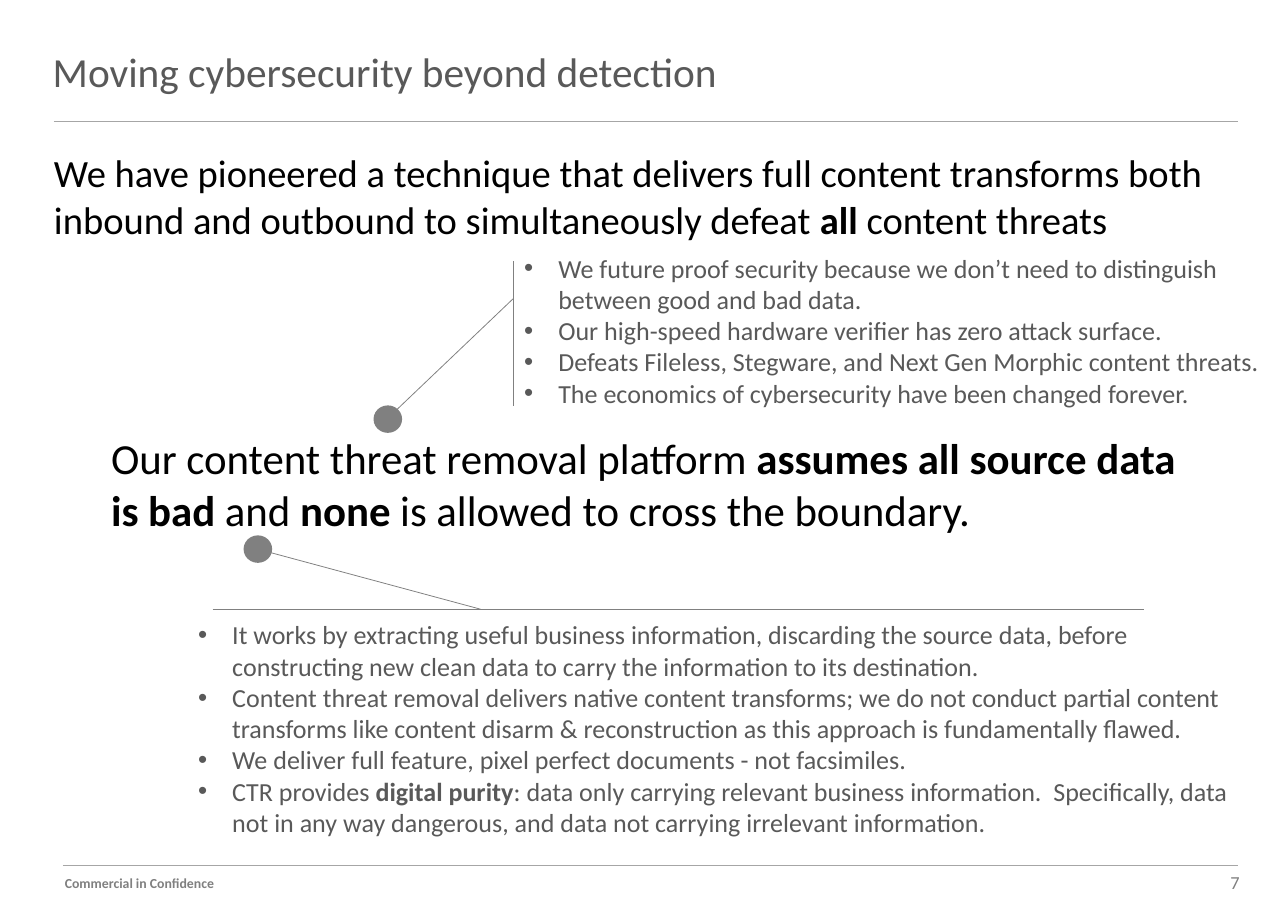
from lxml.etree import SubElement
from pptx import Presentation
from pptx.dml.color import RGBColor
from pptx.enum.shapes import MSO_CONNECTOR, MSO_SHAPE
from pptx.enum.text import MSO_ANCHOR, MSO_AUTO_SIZE, PP_ALIGN
from pptx.oxml.ns import qn
from pptx.util import Inches, Pt

BLACK = RGBColor(0x00, 0x00, 0x00)
DARK_GRAY = RGBColor(0x59, 0x59, 0x59)
MID_GRAY = RGBColor(0x80, 0x80, 0x80)
RULE_GRAY = RGBColor(0xA6, 0xA6, 0xA6)
FONT = "Calibri"
BULLET_INDENT = Inches(0.31)

STATEMENT = [[
    ("We have pioneered a technique that delivers full content transforms both "
     "inbound and outbound to simultaneously defeat ", False),
    ("all", True),
    (" content threats", False),
]]
PLATFORM = [[
    ("Our content threat removal platform ", False),
    ("assumes all source data is bad", True),
    (" and ", False),
    ("none ", True),
    ("is allowed to cross the boundary.", False),
]]
BENEFITS = [
    [("We future proof security because we don’t need to distinguish "
      "between good and bad data.", False)],
    [("Our high-speed hardware verifier has zero attack surface.", False)],
    [("Defeats Fileless, Stegware, and Next Gen Morphic content threats.", False)],
    [("The economics of cybersecurity have been changed forever.", False)],
]
METHOD = [
    [("It works by extracting useful business information, discarding the source data, "
      "before constructing new clean data to carry the information to its destination.", False)],
    [("Content threat removal delivers native content transforms; we do not conduct partial "
      "content transforms like content disarm & reconstruction as this approach is "
      "fundamentally flawed.", False)],
    [("We deliver full feature, pixel perfect documents - not facsimiles.", False)],
    [("CTR provides ", False),
     ("digital purity", True),
     (": data only carrying relevant business information.  Specifically, data not in any "
      "way dangerous, and data not carrying irrelevant information.", False)],
]
HEADING = [[("Moving cybersecurity beyond detection", False)]]
CONFIDENTIAL = [[("Commercial in Confidence", True)]]
PAGE_NUMBER = [[("7", False)]]

# Percent of slide width and height: left, top, width, height
STATEMENT_AREA = (3.25, 15.6, 97.6, 11.73)
TEXT_BOXES = [
    (PAGE_NUMBER, (83.66, 95.04, 13.43, 3.63), 12, MID_GRAY, False, PP_ALIGN.RIGHT),
    (CONFIDENTIAL, (4.19, 95.4, 29, 3.02), 9, MID_GRAY, False, PP_ALIGN.LEFT),
    (PLATFORM, (7.78, 46.8, 86.31, 12.58), 28, BLACK, False, PP_ALIGN.LEFT),
    (BENEFITS, (39.86, 27.09, 59.2, 18.5), 17, DARK_GRAY, True, PP_ALIGN.LEFT),
    (METHOD, (14.54, 67.35, 83.66, 26.24), 17, DARK_GRAY, True, PP_ALIGN.LEFT),
    (HEADING, (3.25, 4.47, 78.44, 6.89), 27, DARK_GRAY, False, PP_ALIGN.LEFT),
]
LINES = [
    ((4.19, 13.3), (96.15, 13.3), RULE_GRAY),
    ((4.88, 95.04), (96.15, 95.04), RULE_GRAY),
    ((39.86, 28.66), (39.86, 44.62), MID_GRAY),
    ((16.51, 66.87), (88.79, 66.87), MID_GRAY),
    ((39.86, 32.77), (30.8, 44.98), MID_GRAY),
    ((19.85, 60.22), (37.3, 66.87), MID_GRAY),
]
DOTS = [(18.91, 58.77), (29, 44.5)]
DOT_SIZE = (2.22, 3.02)

presentation = Presentation()
presentation.slide_width = Inches(11.69)
presentation.slide_height = Inches(8.27)
slide = presentation.slides.add_slide(presentation.slide_layouts[5])


def scale(*shares):
    sides = (presentation.slide_width, presentation.slide_height)
    return [round(share * sides[index % 2] / 100) for index, share in enumerate(shares)]


def add_bullet(paragraph):
    properties = paragraph._p.get_or_add_pPr()
    properties.set("marL", str(BULLET_INDENT))
    properties.set("indent", str(-BULLET_INDENT))
    SubElement(properties, qn("a:buFont")).set("typeface", "Arial")
    SubElement(properties, qn("a:buChar")).set("char", "•")


def write_text(text_frame, content, size, color, bulleted=False, alignment=PP_ALIGN.LEFT):
    text_frame.word_wrap = True
    text_frame.auto_size = MSO_AUTO_SIZE.NONE
    for index, pieces in enumerate(content):
        paragraph = text_frame.add_paragraph() if index else text_frame.paragraphs[0]
        paragraph.alignment = alignment
        if bulleted:
            add_bullet(paragraph)
        for text, bold in pieces:
            run = paragraph.add_run()
            run.text = text
            run.font.name = FONT
            run.font.size = Pt(size)
            run.font.bold = bold
            run.font.color.rgb = color


title = slide.shapes.title
title.left, title.top, title.width, title.height = scale(*STATEMENT_AREA)
title_frame = title.text_frame
title_frame.vertical_anchor = MSO_ANCHOR.MIDDLE
title_frame.margin_left = title_frame.margin_right = Inches(0.11)
title_frame.margin_top = title_frame.margin_bottom = Inches(0.06)
write_text(title_frame, STATEMENT, 25.2, BLACK)

for start, end, color in LINES:
    connector = slide.shapes.add_connector(MSO_CONNECTOR.STRAIGHT, *scale(*start, *end))
    connector.line.color.rgb = color
    connector.line.width = Pt(0.5)
    SubElement(connector._element.spPr, qn("a:effectLst"))

for position in DOTS:
    dot = slide.shapes.add_shape(MSO_SHAPE.OVAL, *scale(*position, *DOT_SIZE))
    dot.shadow.inherit = False
    dot.fill.solid()
    dot.fill.fore_color.rgb = MID_GRAY
    dot.line.fill.background()

for content, area, size, color, bulleted, alignment in TEXT_BOXES:
    text_box = slide.shapes.add_textbox(*scale(*area))
    write_text(text_box.text_frame, content, size, color, bulleted, alignment)

presentation.save("out.pptx")
